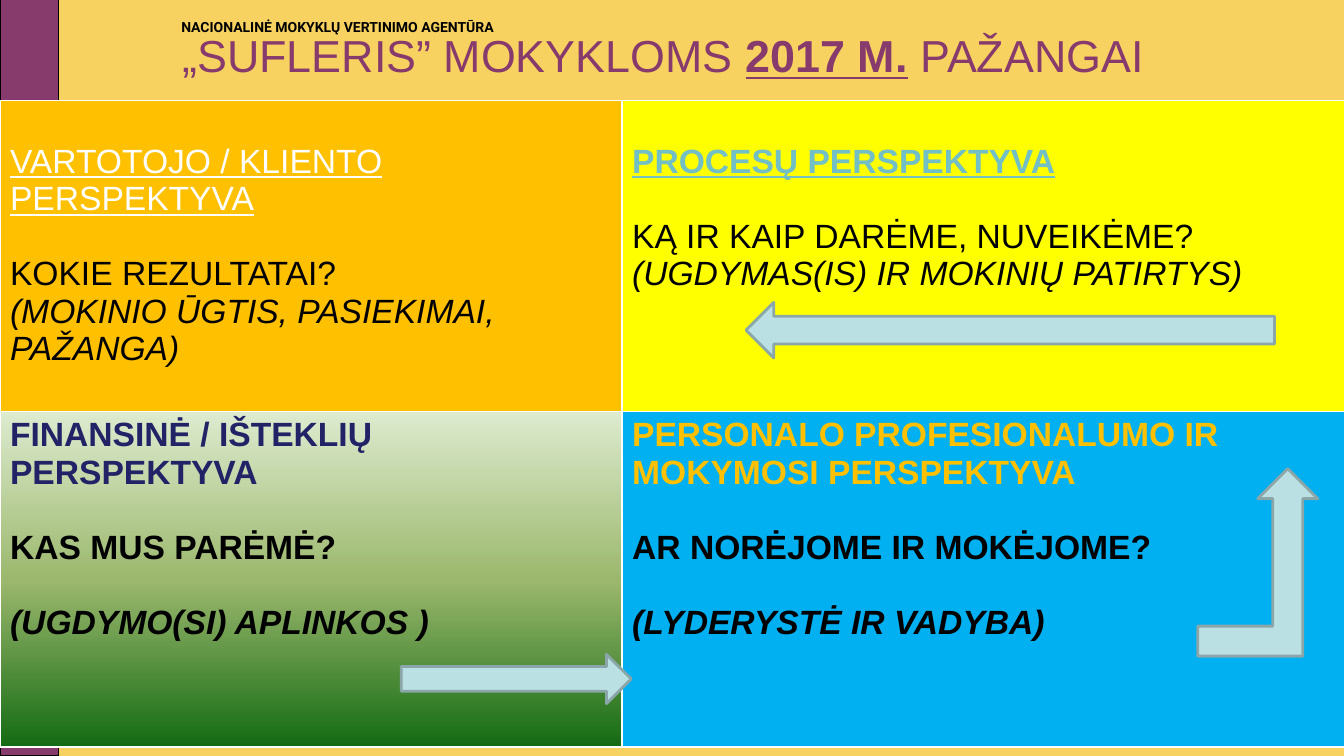
import pptx
import pptx.dml.color
import pptx.enum.shapes
import pptx.enum.text
import pptx.oxml
import pptx.oxml.ns
import pptx.util
from pptx.util import Inches

SHAPES = pptx.enum.shapes.MSO_SHAPE
PURPLE = "873A6C"
BLACK = "000000"
WHITE = "FFFFFF"
PALE_BLUE = "BBE0E3"
GREEN_STOPS = [(0, "DDEBCF"), (50, "9CB86E"), (100, "156B13")]
BLANK_LINE = 26.8


def color(value):
    return pptx.dml.color.RGBColor.from_string(value)


class PerspectiveSlide:
    font = "Arial"
    title_size = 32
    cell_size = 24

    def __init__(self, presentation, background):
        self.slide = presentation.slides.add_slide(presentation.slide_layouts[5])
        self.slide.background.fill.solid()
        self.slide.background.fill.fore_color.rgb = color(background)

    def format_run(self, run, size, hex_color, bold=False, italic=False, underline=False, font=None):
        run.font.name = font or self.font
        run.font.size = pptx.util.Pt(size)
        run.font.color.rgb = color(hex_color)
        run.font.bold = bold
        run.font.italic = italic
        run.font.underline = underline

    def title(self, box, parts):
        title = self.slide.shapes.title
        title.left, title.top, title.width, title.height = map(Inches, box)
        title.text_frame.word_wrap = True
        title.text_frame.vertical_anchor = pptx.enum.text.MSO_ANCHOR.MIDDLE
        paragraph = title.text_frame.paragraphs[0]
        paragraph.alignment = pptx.enum.text.PP_ALIGN.CENTER
        for text, emphasis in parts:
            run = paragraph.add_run()
            run.text = text
            self.format_run(run, self.title_size, PURPLE, bold=emphasis, underline=emphasis)

    def label(self, box, text, size, font):
        text_box = self.slide.shapes.add_textbox(*map(Inches, box))
        text_box.text_frame.word_wrap = True
        text_box.text_frame.text = text
        run = text_box.text_frame.paragraphs[0].runs[0]
        self.format_run(run, size, BLACK, bold=True, font=font)

    def shape(self, kind, box, fill, line, width):
        shape = self.slide.shapes.add_shape(kind, *map(Inches, box))
        shape.shadow.inherit = False
        shape.fill.solid()
        shape.fill.fore_color.rgb = color(fill)
        shape.line.color.rgb = color(line)
        shape.line.width = pptx.util.Pt(width)

    def arrow(self, kind, box):
        self.shape(kind, box, PALE_BLUE, "8AA6A8", 2)

    def table(self, left, top, columns, rows, cells):
        frame = self.slide.shapes.add_table(
            len(rows), len(columns), Inches(left), Inches(top), Inches(sum(columns)), Inches(sum(rows)))
        table = frame.table
        table.first_row = False
        table.horz_banding = False
        for column, width in zip(table.columns, columns):
            column.width = Inches(width)
        for row, height in zip(table.rows, rows):
            row.height = Inches(height)
        for cell, content in zip(table.iter_cells(), cells):
            self.cell(cell, **content)

    def cell(self, cell, fill, top_margin, paragraphs):
        cell.margin_left = cell.margin_right = Inches(0.1)
        cell.margin_top = Inches(top_margin)
        cell.margin_bottom = Inches(0.05)
        cell.text_frame.text = "\n".join(text for text, space, style in paragraphs)
        for paragraph, (text, space, style) in zip(cell.text_frame.paragraphs, paragraphs):
            paragraph.space_before = pptx.util.Pt(space)
            self.format_run(paragraph.runs[0], self.cell_size, **style)
        self.borders(cell)
        if isinstance(fill, str):
            cell.fill.solid()
            cell.fill.fore_color.rgb = color(fill)
        else:
            self.gradient(cell, fill)

    def borders(self, cell):
        properties = cell._tc.get_or_add_tcPr()
        for side in "LRTB":
            properties.append(pptx.oxml.parse_xml(
                f'<a:ln{side} {pptx.oxml.ns.nsdecls("a")} w="12700"><a:solidFill>'
                f'<a:srgbClr val="{WHITE}"/></a:solidFill></a:ln{side}>'))

    def gradient(self, cell, stops):
        marks = "".join(
            f'<a:gs pos="{position * 1000}"><a:srgbClr val="{value}"/></a:gs>' for position, value in stops)
        cell._tc.get_or_add_tcPr().append(pptx.oxml.parse_xml(
            f'<a:gradFill {pptx.oxml.ns.nsdecls("a")} rotWithShape="1"><a:gsLst>{marks}</a:gsLst>'
            '<a:lin ang="5400000" scaled="0"/></a:gradFill>'))


def perspective(fill, heading, question, topic, heading_style, bold, top_margin, topic_space):
    return {
        "fill": fill,
        "top_margin": top_margin,
        "paragraphs": [
            (heading, 0, heading_style),
            (question, BLANK_LINE, {"hex_color": BLACK, "bold": bold}),
            (topic, topic_space, {"hex_color": BLACK, "bold": bold, "italic": True}),
        ],
    }


def main():
    presentation = pptx.Presentation()
    presentation.slide_width = Inches(13.33)
    presentation.slide_height = Inches(7.5)
    slide = PerspectiveSlide(presentation, "F8D261")

    slide.shape(SHAPES.RECTANGLE, (0, 0, 0.58, 7.5), PURPLE, BLACK, 0.75)
    slide.label((1.7, 0.13, 9.16, 0.27), "NACIONALINĖ MOKYKLŲ VERTINIMO AGENTŪRA", 10, "Roboto")
    slide.title((0.89, 0.17, 11.5, 0.75), [
        ("„SUFLERIS” MOKYKLOMS ", False), ("2017 M.", True), (" PAŽANGAI ", False)])

    upper = {"bold": False, "top_margin": 0.42, "topic_space": 0}
    lower = {"bold": True, "top_margin": 0.05, "topic_space": BLANK_LINE}
    slide.table(0, 1, [6.17, 7.32], [3.08, 3.33], [
        perspective("FFC000", "VARTOTOJO / KLIENTO PERSPEKTYVA", "KOKIE REZULTATAI?",
                    "(MOKINIO ŪGTIS, PASIEKIMAI, PAŽANGA)",
                    {"hex_color": WHITE, "underline": True}, **upper),
        perspective("FFFF00", "PROCESŲ PERSPEKTYVA", "KĄ IR KAIP DARĖME, NUVEIKĖME?",
                    "(UGDYMAS(IS) IR MOKINIŲ PATIRTYS)",
                    {"hex_color": "72BFC5", "bold": True, "underline": True}, **upper),
        perspective(GREEN_STOPS, "FINANSINĖ / IŠTEKLIŲ PERSPEKTYVA", "KAS MUS PARĖMĖ?",
                    "(UGDYMO(SI) APLINKOS )",
                    {"hex_color": "222267", "bold": True}, **lower),
        perspective("00B0F0", "PERSONALO PROFESIONALUMO IR MOKYMOSI PERSPEKTYVA",
                    "AR NORĖJOME IR MOKĖJOME?", "(LYDERYSTĖ IR VADYBA)",
                    {"hex_color": "FFC000", "bold": True}, **lower),
    ])

    slide.arrow(SHAPES.LEFT_ARROW, (7.4, 3, 5.24, 0.55))
    slide.arrow(SHAPES.BENT_UP_ARROW, (11.88, 4.65, 1.19, 1.86))
    slide.arrow(SHAPES.RIGHT_ARROW, (3.98, 6.49, 2.28, 0.49))
    presentation.save("out.pptx")


if __name__ == "__main__":
    main()
